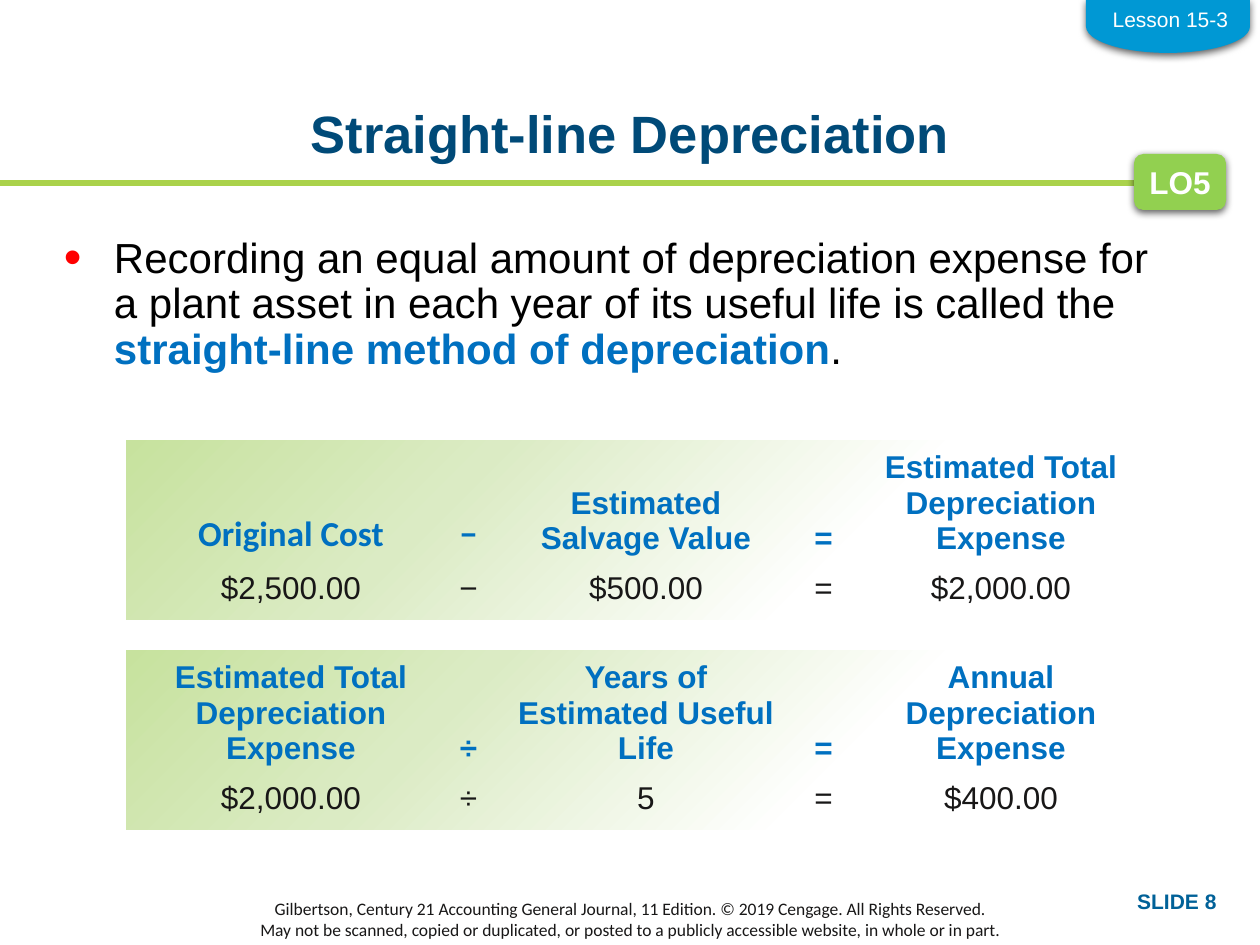
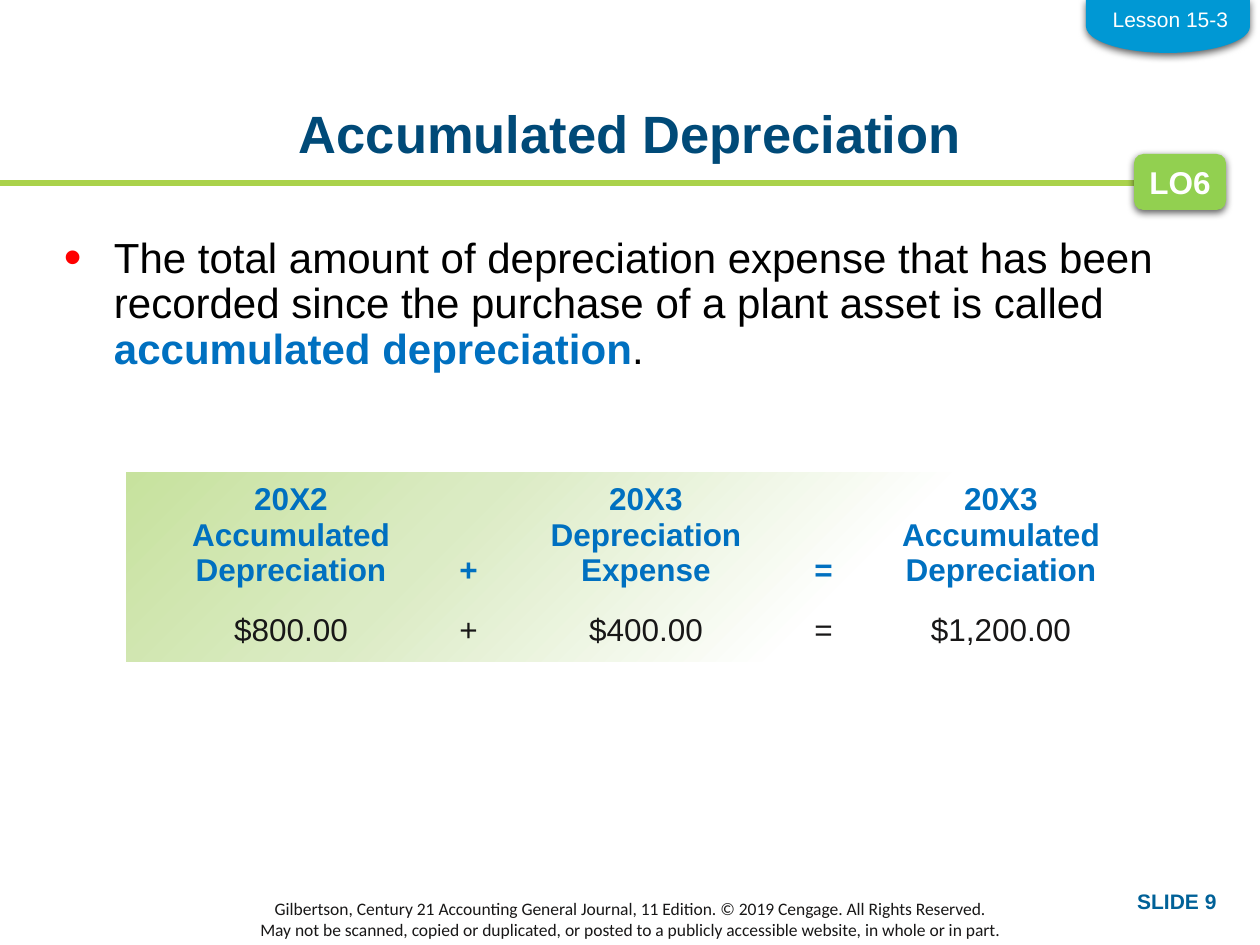
from dataclasses import dataclass

from lxml.etree import SubElement
from pptx import Presentation
from pptx.dml.color import RGBColor
from pptx.enum.shapes import MSO_CONNECTOR, MSO_SHAPE
from pptx.enum.text import MSO_ANCHOR, MSO_AUTO_SIZE, PP_ALIGN
from pptx.oxml import parse_xml
from pptx.oxml.ns import nsdecls, qn
from pptx.util import Emu, Pt


@dataclass(frozen=True)
class Theme:
    sans: str = "Arial"
    slim: str = "Calibri"
    title: str = "004A78"
    body: str = "000000"
    term: str = "0070C0"
    ink: str = "181717"
    page: str = "006198"
    white: str = "FFFFFF"
    rule: str = "AAD24B"
    badge: str = "92D050"
    tab: str = "0098D4"
    dot: str = "FF0000"
    fade: tuple = ((0, "C7E29E"), (35, "DBEBC4"), (77, "FFFFFF"))
    huge: int = 30
    large: int = 24
    mid: int = 20
    base: int = 18
    small: int = 12
    tiny: int = 10


LOOK = Theme()
SCALE = 914400 / 126
PLAIN = "{2D5ABB26-0587-4C30-8999-92F81FD0307C}"
WIDE, SLIM = 266, 89
CREDIT = (
    "Gilbertson, Century 21 Accounting General Journal, 11 Edition. © 2019 Cengage. All Rights Reserved.",
    "May not be scanned, copied or duplicated, or posted to a publicly accessible website, in whole or in part.",
)


def px(num):
    return Emu(round(num * SCALE))


def place(box):
    return [px(num) for num in box]


def style(font, size, color, bold=False, face=LOOK.sans):
    font.name = face
    font.size = Pt(size)
    font.bold = bold
    font.color.rgb = RGBColor.from_string(color)


def trim(frame, side=0, top=0, base=0):
    frame.margin_left = frame.margin_right = px(side)
    frame.margin_top, frame.margin_bottom = px(top), px(base)


def write(frame, lines, align, *look, **more):
    frame.text = "\n".join(lines)
    for para in frame.paragraphs:
        para.alignment = align
        style(para.font, *look, **more)


def label(slide, box, lines, align, *look, wrap=True, **more):
    frame = slide.shapes.add_textbox(*place(box)).text_frame
    frame.word_wrap = wrap
    write(frame, lines, align, *look, **more)
    return frame


def panel(slide, kind, box, color):
    shape = slide.shapes.add_shape(kind, *place(box))
    shape.shadow.inherit = False
    shape.line.fill.background()
    shape.fill.solid()
    shape.fill.fore_color.rgb = RGBColor.from_string(color)
    return shape


def raise_up(shape):
    glow = shape._element.spPr.find(qn("a:effectLst"))
    glow.append(parse_xml(
        f'<a:outerShdw {nsdecls("a")} blurRad="57150" dist="19050" dir="5400000" '
        'algn="ctr" rotWithShape="0"><a:srgbClr val="000000">'
        '<a:alpha val="63000"/></a:srgbClr></a:outerShdw>'))


def blend(shape):
    props = shape._element.spPr
    stops = "".join(
        f'<a:gs pos="{pos * 1000}"><a:srgbClr val="{color}"/></a:gs>'
        for pos, color in LOOK.fade)
    props.replace(props.find(qn("a:solidFill")), parse_xml(
        f'<a:gradFill {nsdecls("a")} rotWithShape="1"><a:gsLst>{stops}</a:gsLst>'
        '<a:path path="circle"><a:fillToRect r="100000" b="100000"/></a:path>'
        '<a:tileRect l="-100000" t="-100000"/></a:gradFill>'))


def rule(slide, left, top, width):
    line = slide.shapes.add_connector(
        MSO_CONNECTOR.STRAIGHT, *place((left, top, left + width, top)))
    line.line.color.rgb = RGBColor.from_string(LOOK.rule)
    line.line.width = Pt(3)
    SubElement(line._element.spPr, qn("a:effectLst"))


def badge(slide, box, text):
    shape = panel(slide, MSO_SHAPE.ROUNDED_RECTANGLE, box, LOOK.badge)
    raise_up(shape)
    frame = shape.text_frame
    frame.word_wrap = False
    frame.vertical_anchor = MSO_ANCHOR.MIDDLE
    write(frame, [text], PP_ALIGN.CENTER, LOOK.base, LOOK.white, True)


def corner(slide, box, text):
    left, top, width, height = box
    shift = (width - height) / 2
    shape = panel(slide, MSO_SHAPE.FLOWCHART_DELAY,
                  (left + shift, top - shift, height, width), LOOK.tab)
    shape.rotation = 90
    raise_up(shape)
    label(slide, (left + 14, top, 141, 38), [text], PP_ALIGN.CENTER,
          LOOK.small, LOOK.white, wrap=False)


def head(slide, box, text):
    shape = slide.shapes.title
    shape.left, shape.top, shape.width, shape.height = place(box)
    frame = shape.text_frame
    trim(frame)
    frame.auto_size = MSO_AUTO_SIZE.NONE
    frame.vertical_anchor = MSO_ANCHOR.TOP
    write(frame, [text], PP_ALIGN.CENTER, LOOK.huge, LOOK.title, True)
    frame.paragraphs[0].line_spacing = 0.9


def point(slide, box, lead, term):
    shape = slide.placeholders[1]
    shape.left, shape.top, shape.width, shape.height = place(box)
    frame = shape.text_frame
    trim(frame)
    frame.auto_size = MSO_AUTO_SIZE.NONE
    para = frame.paragraphs[0]
    para.line_spacing = 0.9
    para.space_before = Pt(0)
    props = para._p.get_or_add_pPr()
    props.set("marL", str(px(50)))
    props.set("indent", str(-px(50)))
    tint = SubElement(props, qn("a:buClr"))
    SubElement(tint, qn("a:srgbClr"), val=LOOK.dot)
    SubElement(props, qn("a:buSzPct"), val="120000")
    SubElement(props, qn("a:buFont"), typeface=LOOK.sans)
    SubElement(props, qn("a:buChar"), char="•")
    style(para.font, LOOK.large, LOOK.body)
    for text in (lead, term, "."):
        run = para.add_run()
        run.text = text
        if text == term:
            run.font.bold = True
            run.font.color.rgb = RGBColor.from_string(LOOK.term)


def row(slide, left, top, height, texts, color, bold, slims=0):
    widths = [SLIM if num % 2 else WIDE for num in range(len(texts))]
    grid = slide.shapes.add_table(
        1, len(texts), *place((left, top, sum(widths), height))).table
    grid.first_row = grid.horz_banding = False
    grid._tbl.tblPr.find(qn("a:tableStyleId")).text = PLAIN
    grid.rows[0].height = px(height)
    for num, (text, width) in enumerate(zip(texts, widths)):
        grid.columns[num].width = px(width)
        cell = grid.cell(0, num)
        cell.fill.background()
        cell.vertical_anchor = MSO_ANCHOR.BOTTOM
        trim(cell, 1, 1)
        size, face = (LOOK.mid, LOOK.slim) if num < slims else (LOOK.base, LOOK.sans)
        write(cell.text_frame, [text], PP_ALIGN.CENTER, size, color, bold, face=face)


def sum_box(slide, box, names, values, slims=0):
    left, top, width, height = box
    blend(panel(slide, MSO_SHAPE.RECTANGLE, box, LOOK.white))
    row(slide, left + 32, top, 115, names, LOOK.term, True, slims)
    row(slide, left + 32, top + height - 53, 39, values, LOOK.ink, False)


def page(deck, num, goal, title, lead, term, depth):
    slide = deck.slides.add_slide(deck.slide_layouts[1])
    rule(slide, 0, 183, 1197)
    foot = label(slide, (0, 900, 1260, 38), CREDIT, PP_ALIGN.CENTER,
                 LOOK.tiny, LOOK.ink, face=LOOK.slim)
    foot.vertical_anchor = MSO_ANCHOR.MIDDLE
    head(slide, (87, 108, 1086, 93), title)
    point(slide, (64, 237, 1108, depth), lead, term)
    badge(slide, (1134, 154, 92, 56), goal)
    label(slide, (977, 882, 252, 38), [f"SLIDE {num}"], PP_ALIGN.RIGHT,
          LOOK.small, LOOK.page, True)
    corner(slide, (1086, 0, 164, 53), "Lesson 15-3")
    return slide


def main():
    deck = Presentation()
    deck.slide_width, deck.slide_height = px(1260), px(945)

    slide = page(
        deck, 8, "LO5", "Straight-line Depreciation",
        "Recording an equal amount of depreciation expense for a plant asset "
        "in each year of its useful life is called the ",
        "straight-line method of depreciation", 258)
    total = "Estimated Total Depreciation Expense"
    sum_box(slide, (126, 441, 903, 179),
            ("Original Cost", "−", "Estimated Salvage Value", "=", total),
            ("$2,500.00", "−", "$500.00", "=", "$2,000.00"), 2)
    sum_box(slide, (126, 651, 903, 179),
            (total, "÷", "Years of Estimated Useful Life", "=",
             "Annual Depreciation Expense"),
            ("$2,000.00", "÷", "5", "=", "$400.00"))

    slide = page(
        deck, 9, "LO6", "Accumulated Depreciation",
        "The total amount of depreciation expense that has been recorded "
        "since the purchase of a plant asset is called ",
        "accumulated depreciation", 514)
    sum_box(slide, (126, 473, 903, 189),
            ("20X2 Accumulated Depreciation", "+", "20X3 Depreciation Expense",
             "=", "20X3 Accumulated Depreciation"),
            ("$800.00", "+", "$400.00", "=", "$1,200.00"))

    deck.save("out.pptx")


if __name__ == "__main__":
    main()
